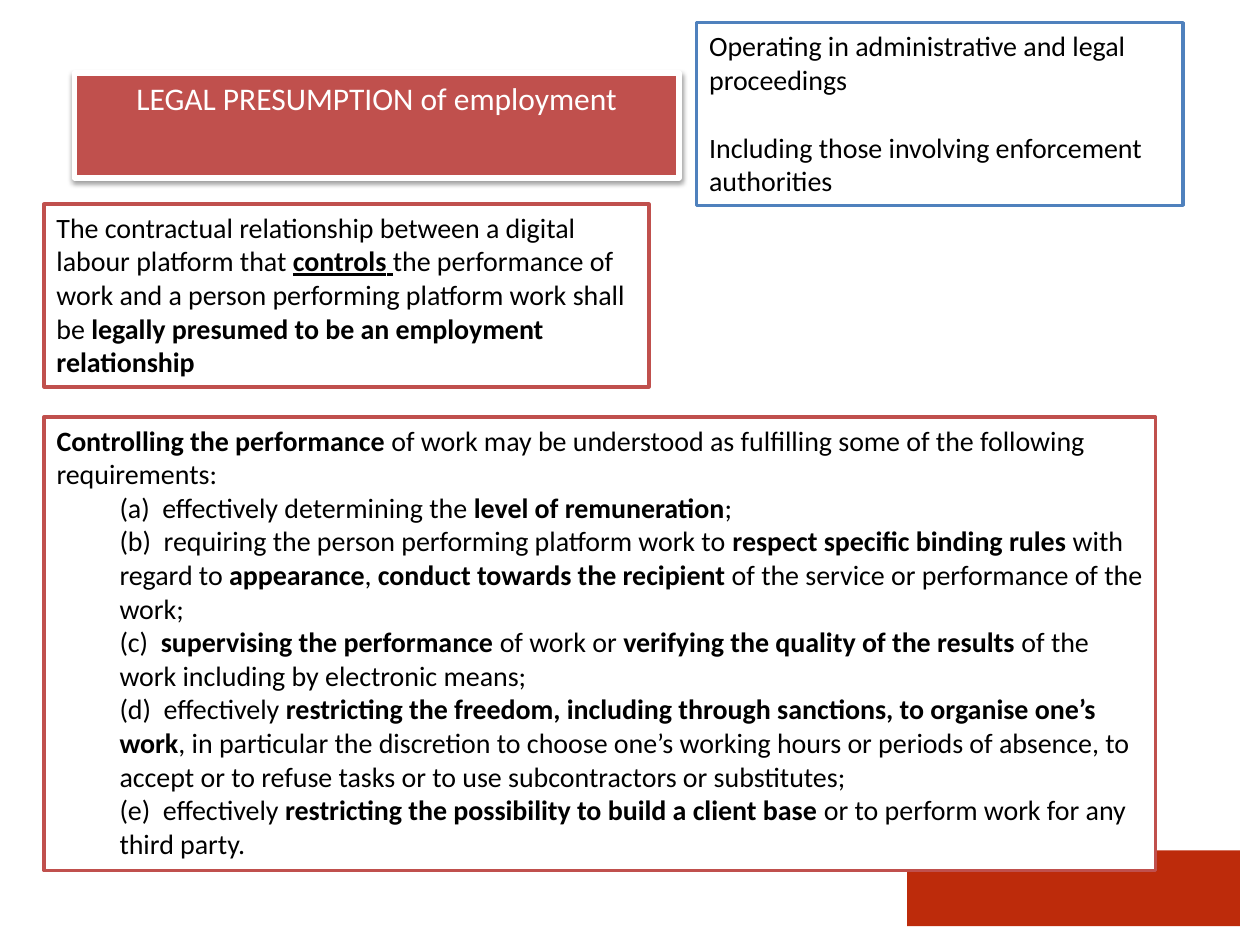
from lxml import etree
from pptx import Presentation
from pptx.dml.color import RGBColor
from pptx.enum import shapes, text
from pptx.oxml import ns
from pptx.util import Inches, Pt

RED = RGBColor(0xC0, 0x50, 0x4D)
BLUE = RGBColor(0x4F, 0x81, 0xBD)
BRICK = RGBColor(0xBD, 0x2B, 0x0B)
WHITE = RGBColor(0xFF, 0xFF, 0xFF)
BLACK = RGBColor(0, 0, 0)

HEADING = "LEGAL PRESUMPTION of employment"
PRESUMPTION = [[
    ("The contractual relationship between a digital labour platform that ", ""),
    ("controls", "bu"),
    (" ", "u"),
    ("the performance of work and a person performing platform work shall be ", ""),
    ("legally presumed to be an employment relationship", "b"),
]]
CONTROL = [[
    ("Controlling the performance ", "b"),
    ("of work may be understood as fulfilling some of the following requirements:", ""),
]]
REQUIREMENTS = [
    [("effectively determining the ", ""), ("level of remuneration", "b"), (";", "")],
    [("requiring the person performing platform work to ", ""),
     ("respect specific binding rules ", "b"),
     ("with regard to ", ""),
     ("appearance", "b"),
     (", ", ""),
     ("conduct towards the recipient ", "b"),
     ("of the service or performance of the work;", "")],
    [("supervising the performance ", "b"),
     ("of work or ", ""),
     ("verifying the quality of the results ", "b"),
     ("of the work including by electronic means;", "")],
    [("effectively ", ""),
     ("restricting the freedom, including through sanctions, to organise one’s work", "b"),
     (", in particular the discretion to choose one’s working hours or periods of absence, "
      "to accept or to refuse tasks or to use subcontractors or substitutes;", "")],
    [("effectively ", ""),
     ("restricting the possibility to build a client base ", "b"),
     ("or to perform work for any third party.", "")],
]
LETTERED = [[(f"({letter})  ", "")] + runs for letter, runs in zip("abcde", REQUIREMENTS)]
PROCEEDINGS = [
    [("Operating in administrative and legal proceedings", "")],
    [("Including those involving enforcement authorities", "")],
]


def paint(shape, fill, line=None, width=2):
    shape.fill.solid()
    shape.fill.fore_color.rgb = fill
    if line is None:
        shape.line.fill.background()
    else:
        shape.line.color.rgb = line
        shape.line.width = Pt(width)


def write(frame, paragraphs, size=16, color=BLACK, align=text.PP_ALIGN.LEFT,
          gap=0, indented_from=None):
    frame.word_wrap = True
    frame.auto_size = text.MSO_AUTO_SIZE.SHAPE_TO_FIT_TEXT
    frame.vertical_anchor = text.MSO_ANCHOR.TOP
    for i, runs in enumerate(paragraphs):
        paragraph = frame.paragraphs[0] if i == 0 else frame.add_paragraph()
        paragraph.alignment = align
        if i and gap:
            paragraph.space_before = Pt(gap)
        if indented_from is not None and i >= indented_from:
            paragraph.level = 1
            properties = paragraph._p.get_or_add_pPr()
            properties.set("marL", str(Inches(0.5)))
            properties.set("indent", "0")
        for words, style in runs:
            run = paragraph.add_run()
            run.text = words
            font = run.font
            font.name, font.size, font.color.rgb = "Calibri", Pt(size), color
            font.bold = "b" in style
            font.underline = "u" in style


def add_box(slide, place, line, paragraphs, **layout):
    box = slide.shapes.add_textbox(*map(Inches, place))
    paint(box, WHITE, line)
    write(box.text_frame, paragraphs, **layout)


def add_shadow(shape):
    effects = etree.SubElement(shape._element.spPr, ns.qn("a:effectLst"))
    shadow = etree.SubElement(effects, ns.qn("a:outerShdw"), blurRad=str(Pt(3.1)),
                              dist=str(Pt(1.6)), dir="5400000", rotWithShape="0")
    tint = etree.SubElement(shadow, ns.qn("a:srgbClr"), val="000000")
    etree.SubElement(tint, ns.qn("a:alpha"), val="38000")


def main():
    deck = Presentation()
    deck.slide_width, deck.slide_height = Inches(10), Inches(7.5)
    slide = deck.slides.add_slide(deck.slide_layouts[5])

    corner = slide.shapes.add_shape(shapes.MSO_SHAPE.RECTANGLE,
                                    *map(Inches, (7.2, 6.75, 2.64, 0.6)))
    corner.shadow.inherit = False
    paint(corner, BRICK)

    add_box(slide, (0.35, 1.62, 4.8, 1.45), RED, PRESUMPTION)
    add_box(slide, (0.35, 3.31, 8.82, 3.6), RED, CONTROL + LETTERED, indented_from=1)
    add_box(slide, (5.53, 0.18, 3.86, 1.45), BLUE, PROCEEDINGS, gap=19.5)

    heading = slide.shapes.title
    heading.left, heading.top, heading.width, heading.height = map(
        Inches, (0.59, 0.58, 4.8, 0.4))
    paint(heading, RED, WHITE, width=3)
    add_shadow(heading)
    write(heading.text_frame, [[(HEADING, "")]], size=18, color=WHITE,
          align=text.PP_ALIGN.CENTER)

    deck.save("out.pptx")


if __name__ == "__main__":
    main()
